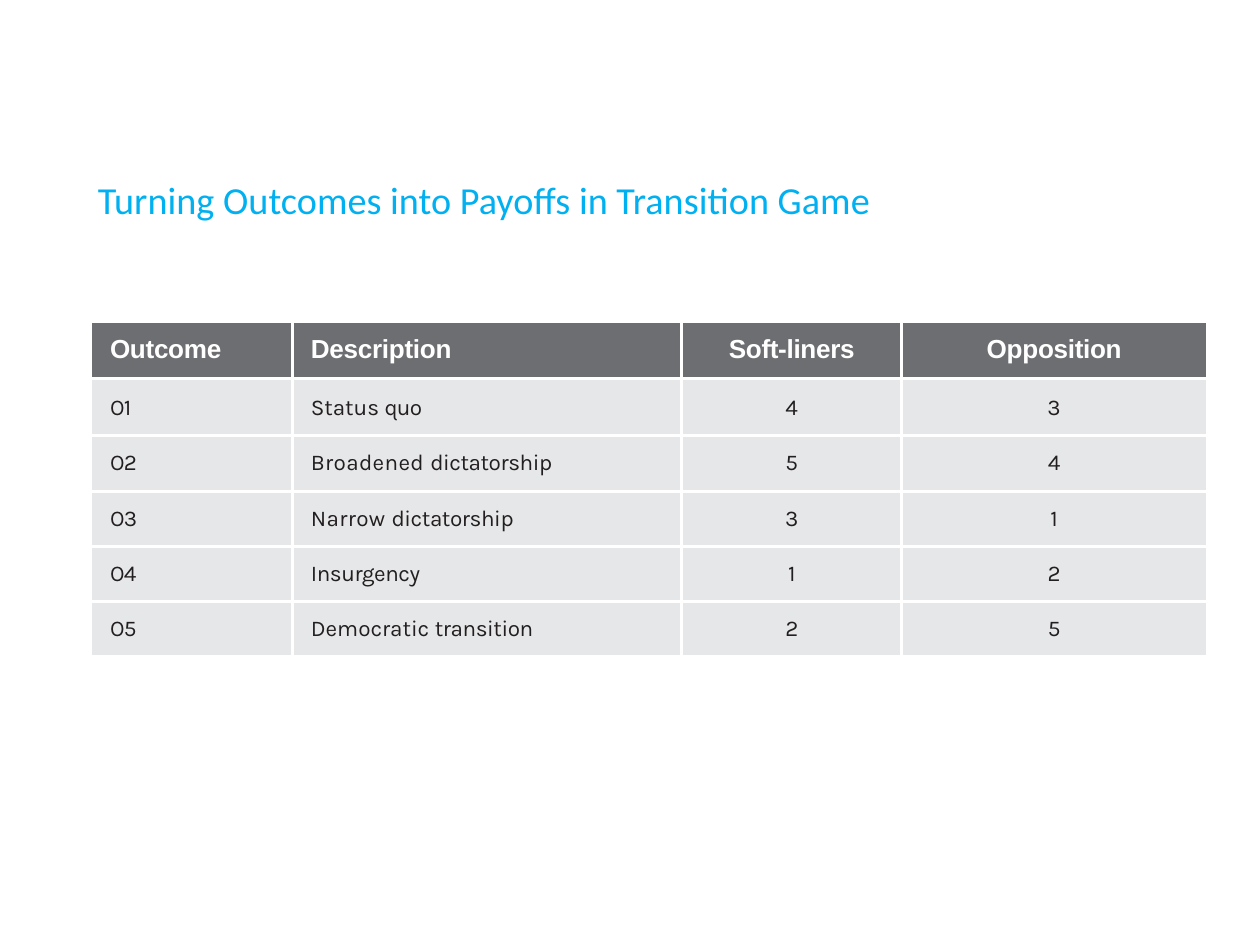
from lxml.etree import SubElement
from pptx import Presentation
from pptx.dml.color import RGBColor
from pptx.enum.text import MSO_ANCHOR, MSO_AUTO_SIZE, PP_ALIGN
from pptx.oxml.ns import qn
from pptx.util import Emu, Pt

PX = 914400 / 250  # EMU in one px

WHITE, BLUE, GREY, PALE, INK = "FFFFFF", "00B0F0", "6D6E71", "E6E7E8", "231F20"

COLUMNS = [201, 389, 220, 305]
ROWS = [57, 57, 56, 55, 55, 55]
INDENT = 18

HEADER = ["Outcome", "Description", "Soft-liners", "Opposition"]
# Outcome, description as (text, letter spacing in 1/100 pt), payoffs
OUTCOMES = [
    ("O1", [("Status ", 0), ("quo", -20)], 4, 3),
    ("O2", [("Broadened ", 10), ("dictatorship", -10)], 5, 4),
    ("O3", [("Narrow ", 10), ("dictatorship", -10)], 3, 1),
    ("O4", [("Insurgency", -10)], 1, 2),
    ("O5", [("Democratic ", 0), ("transition", -10)], 2, 5),
]

TITLE_FONT = {"name": "Calibri", "size": Pt(11), "bold": False}
HEADER_FONT = {"name": "Arial", "size": Pt(7.5), "bold": True}
BODY_FONT = {"name": "Karla", "size": Pt(6.5), "bold": False}


def px(n):
    return Emu(round(n * PX))


def rgb(color):
    return RGBColor.from_string(color)


def set_margins(obj, top):
    margins = {"left": 0, "top": px(top), "right": 0, "bottom": 0}
    for side, value in margins.items():
        setattr(obj, f"margin_{side}", value)


def write(p, runs, font, color, before, align=PP_ALIGN.LEFT, indent=0):
    p.alignment = align
    p.space_before = Pt(before)
    pPr = p._p.get_or_add_pPr()
    pPr.set("marL", str(px(indent)))
    pPr.set("indent", "0")
    for text, spacing in runs:
        r = p.add_run()
        r.text = text
        for name, value in font.items():
            setattr(r.font, name, value)
        r.font.color.rgb = rgb(color)
        r._r.get_or_add_rPr().set("spc", str(spacing))


def add_title(s, text):
    sp = s.shapes.title
    sp.left, sp.top, sp.width, sp.height = px(95), px(173), px(815), px(50)
    tf = sp.text_frame
    tf.word_wrap = True
    tf.auto_size = MSO_AUTO_SIZE.SHAPE_TO_FIT_TEXT
    tf.vertical_anchor = MSO_ANCHOR.TOP
    set_margins(tf, 3)
    write(tf.paragraphs[0], [(text, 0)], TITLE_FONT, BLUE, 0.9, indent=3)


def add_borders(cell, open_side):
    tcPr = cell._tc.get_or_add_tcPr()
    for side in ("lnL", "lnR", "lnT", "lnB"):
        line = SubElement(tcPr, qn(f"a:{side}"), w=str(Pt(1)))
        if side == open_side:
            SubElement(line, qn("a:noFill"))
        else:
            fill = SubElement(line, qn("a:solidFill"))
            SubElement(fill, qn("a:srgbClr"), val=WHITE)


def fill_row(table, row, contents, font, color, fill, top, before):
    # The table has no border at its left and right ends
    open_sides = {0: "lnL", len(COLUMNS) - 1: "lnR"}
    for col, runs in enumerate(contents):
        cell = table.cell(row, col)
        add_borders(cell, open_sides.get(col))
        cell.fill.solid()
        cell.fill.fore_color.rgb = rgb(fill)
        cell.vertical_anchor = MSO_ANCHOR.TOP
        set_margins(cell, top)
        # Words start at the left, payoffs are centred
        place = {"indent": INDENT} if col < 2 else {"align": PP_ALIGN.CENTER}
        write(cell.text_frame.paragraphs[0], runs, font, color, before, **place)


def add_payoff_table(s):
    frame = s.shapes.add_table(len(ROWS), len(COLUMNS), px(92), px(322),
                               px(sum(COLUMNS)), px(sum(ROWS)))
    table = frame.table
    table.horz_banding = False
    for column, width in zip(table.columns, COLUMNS):
        column.width = px(width)
    for row, height in zip(table.rows, ROWS):
        row.height = px(height)

    # Header
    heads = [[(text, -10)] for text in HEADER]
    fill_row(table, 0, heads, HEADER_FONT, WHITE, GREY, 13, 3.8)

    # Outcomes
    for i, (code, description, *payoffs) in enumerate(OUTCOMES, 1):
        contents = [[(code, -20)], description]
        contents += [[(str(payoff), -50)] for payoff in payoffs]
        before = 4.5 if i == 1 else 4
        fill_row(table, i, contents, BODY_FONT, INK, PALE, before * 3.5, before)


def main():
    prs = Presentation()
    prs.slide_width, prs.slide_height = Pt(363), Pt(272.5)
    s = prs.slides.add_slide(prs.slide_layouts[5])
    add_title(s, "Turning Outcomes into Payoffs in Transition Game")
    add_payoff_table(s)
    prs.save("out.pptx")


if __name__ == "__main__":
    main()
